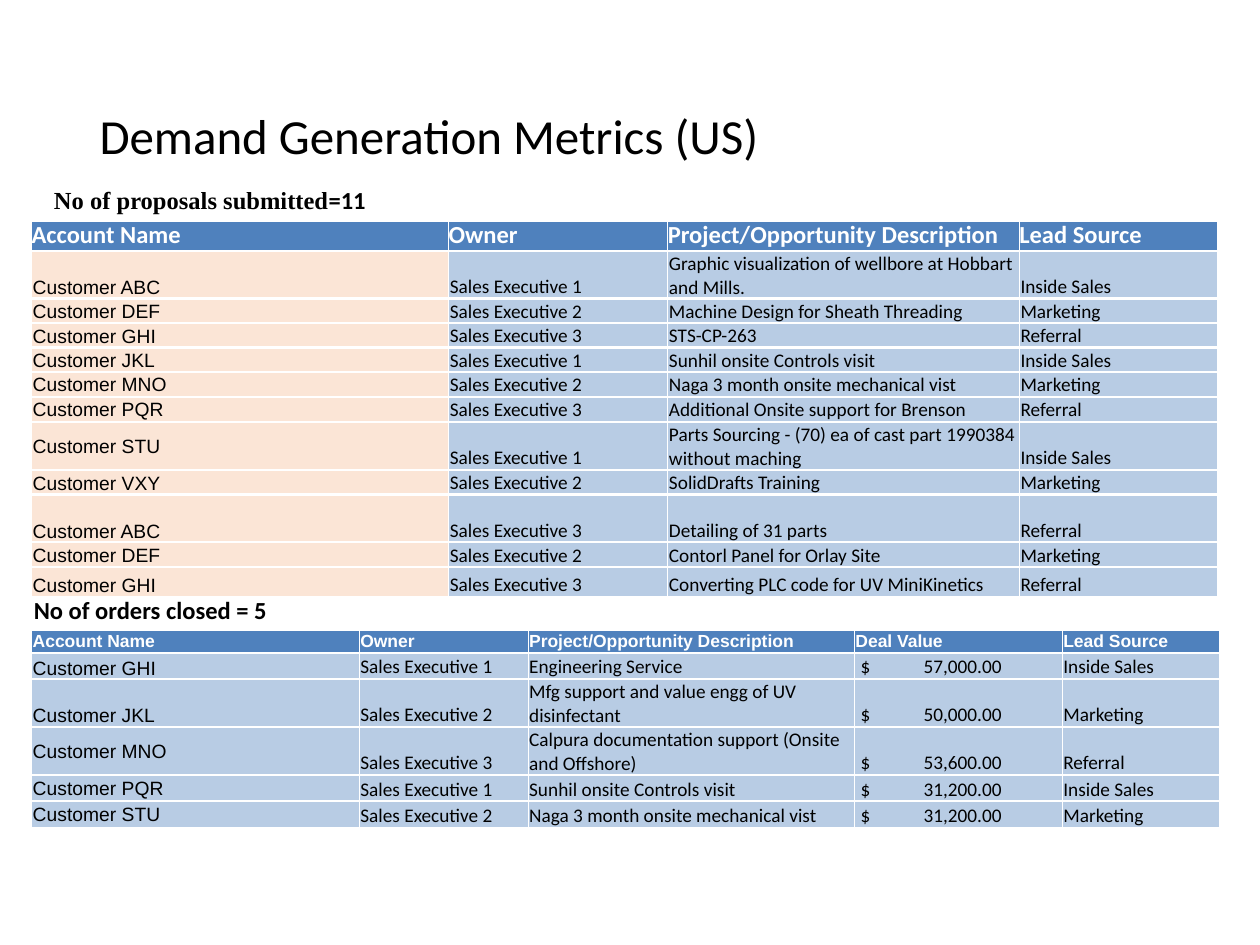
from pptx import Presentation
from pptx.dml.color import RGBColor
from pptx.enum.text import MSO_ANCHOR, PP_ALIGN
from pptx.oxml import parse_xml
from pptx.oxml.ns import nsdecls
from pptx.util import Inches, Pt

BLACK = RGBColor(0x00, 0x00, 0x00)
WHITE = RGBColor(0xFF, 0xFF, 0xFF)
HEADER_BLUE = RGBColor(0x4F, 0x81, 0xBD)
ROW_BLUE = RGBColor(0xB8, 0xCC, 0xE4)
ACCOUNT_PEACH = RGBColor(0xFB, 0xE5, 0xD6)
BORDERS = {"lnL": 0.5, "lnR": 0.5, "lnT": 1.5, "lnB": 1.5}
CENTRED_ACCOUNTS = {"Customer MNO", "Customer PQR", "Customer STU"}

PROPOSALS = [
    ("Account Name", "Owner", "Project/Opportunity Description", "Lead Source"),
    ("Customer ABC", "Sales Executive 1", "Graphic visualization of wellbore at Hobbart and Mills.", "Inside Sales"),
    ("Customer DEF", "Sales Executive 2", "Machine Design for Sheath Threading", "Marketing"),
    ("Customer GHI", "Sales Executive 3", "STS-CP-263", "Referral"),
    ("Customer JKL", "Sales Executive 1", "Sunhil onsite Controls visit", "Inside Sales"),
    ("Customer MNO", "Sales Executive 2", "Naga 3 month onsite mechanical vist", "Marketing"),
    ("Customer PQR", "Sales Executive 3", "Additional Onsite support for Brenson", "Referral"),
    ("Customer STU", "Sales Executive 1", "Parts Sourcing - (70) ea of cast part 1990384 without maching",
     "Inside Sales"),
    ("Customer VXY", "Sales Executive 2", "SolidDrafts Training", "Marketing"),
    ("Customer ABC", "Sales Executive 3", "Detailing of 31 parts", "Referral"),
    ("Customer DEF", "Sales Executive 2", "Contorl Panel for Orlay Site", "Marketing"),
    ("Customer GHI", "Sales Executive 3", "Converting PLC code for UV MiniKinetics", "Referral"),
]
ORDERS = [
    ("Account Name", "Owner", "Project/Opportunity Description", "Deal Value", "Lead Source"),
    ("Customer GHI", "Sales Executive 1", "Engineering Service", "$\t57,000.00", "Inside Sales"),
    ("Customer JKL", "Sales Executive 2", "Mfg support and value engg of UV disinfectant", "$\t50,000.00",
     "Marketing"),
    ("Customer MNO", "Sales Executive 3", "Calpura documentation support (Onsite and Offshore)",
     "$\t53,600.00", "Referral"),
    ("Customer PQR", "Sales Executive 1", "Sunhil onsite Controls visit", "$\t31,200.00", "Inside Sales"),
    ("Customer STU", "Sales Executive 2", "Naga 3 month onsite mechanical vist", "$\t31,200.00", "Marketing"),
]


def add_run(paragraph, text, size, font, color=BLACK, bold=False):
    run = paragraph.add_run()
    run.text = text
    run.font.size = Pt(size)
    run.font.name = font
    run.font.bold = bold
    run.font.color.rgb = color


def add_metrics_table(top, widths, heights, records, header_style, account_fill):
    """header_style is (size, font, anchor, inset) of the first row."""
    header_size, header_font, header_anchor, header_inset = header_style
    table = slide.shapes.add_table(len(records), len(widths), Inches(0.25), Inches(top),
                                   Inches(sum(widths)), Inches(sum(heights))).table
    for column, width in zip(table.columns, widths):
        column.width = Inches(width)
    for row, height in zip(table.rows, heights):
        row.height = Inches(height)
    for row_index, record in enumerate(records):
        for column_index, value in enumerate(record):
            cell = table.cell(row_index, column_index)
            is_header, is_account = row_index == 0, column_index == 0
            inset = header_inset if is_header else 0.01
            cell.margin_left = cell.margin_right = cell.margin_top = Inches(inset)
            cell.margin_bottom = 0
            properties = cell._tc.get_or_add_tcPr()
            for side, points in BORDERS.items():
                properties.append(parse_xml(
                    f'<a:{side} {nsdecls("a")} w="{Pt(points)}"><a:solidFill>'
                    f'<a:srgbClr val="{WHITE}"/></a:solidFill></a:{side}>'))
            cell.fill.solid()
            paragraph = cell.text_frame.paragraphs[0]
            if is_header:
                cell.fill.fore_color.rgb = HEADER_BLUE
                cell.vertical_anchor = header_anchor
                add_run(paragraph, value, header_size, header_font, WHITE, True)
                continue
            cell.fill.fore_color.rgb = account_fill if is_account else ROW_BLUE
            centred = is_account and value in CENTRED_ACCOUNTS
            cell.vertical_anchor = MSO_ANCHOR.MIDDLE if centred else MSO_ANCHOR.BOTTOM
            if "\t" in value:
                paragraph_properties = paragraph._p.get_or_add_pPr()
                paragraph_properties.set("marL", str(Inches(0.04)))
                paragraph_properties.set("indent", "0")
                paragraph_properties.append(parse_xml(
                    f'<a:tabLst {nsdecls("a")}><a:tab pos="{Inches(1.01)}" algn="r"/></a:tabLst>'))
            add_run(paragraph, value, 11, "Arial" if is_account else "Calibri")


prs = Presentation()
prs.slide_width = Inches(10)
prs.slide_height = Inches(7.5)
slide = prs.slides.add_slide(prs.slide_layouts[5])

title = slide.shapes.title
title.left, title.top, title.width, title.height = Inches(0.69), Inches(0.4), Inches(8.62), Inches(1.4)
title.text_frame.vertical_anchor = MSO_ANCHOR.MIDDLE
heading = title.text_frame.paragraphs[0]
heading.alignment = PP_ALIGN.LEFT
heading.line_spacing = 0.9
add_run(heading, "Demand Generation Metrics (US)", 28, "Calibri")

captions = [
    (0.33, 1.42, 3.58, [("No of proposals submitted", "Times New Roman"), ("=11", "Calibri")]),
    (0.17, 4.67, 3.25, [("No of orders closed = 5", "Calibri")]),
]
for left, top, width, parts in captions:
    caption = slide.shapes.add_textbox(Inches(left), Inches(top), Inches(width), Inches(0.34)).text_frame
    caption.word_wrap = True
    for text, font in parts:
        add_run(caption.paragraphs[0], text, 14, font, bold=True)

add_metrics_table(5, [2.6, 1.34, 2.59, 1.65, 1.25], [0.18, 0.21, 0.38, 0.38, 0.21, 0.21],
                  ORDERS, (10, "Arial", MSO_ANCHOR.MIDDLE, 0.01), ROW_BLUE)
add_metrics_table(1.75, [3.31, 1.74, 2.79, 1.57],
                  [0.24, 0.38, 0.19, 0.19, 0.19, 0.2, 0.2, 0.38, 0.19, 0.38, 0.19, 0.24],
                  PROPOSALS, (14, "Calibri", MSO_ANCHOR.TOP, 0), ACCOUNT_PEACH)

prs.save("out.pptx")
